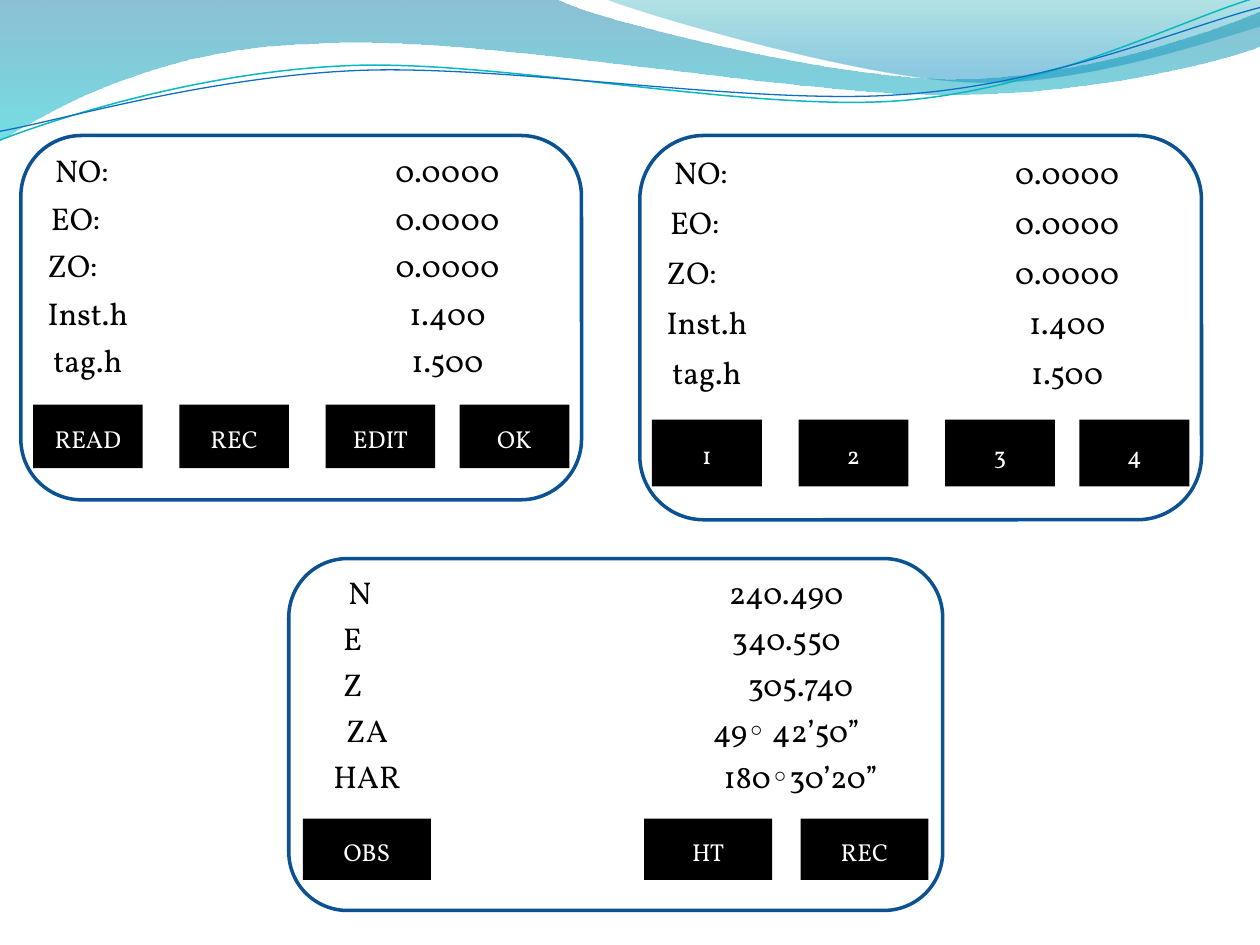
"""Build a slide of three surveying-instrument screens under a wave banner."""
import math
from dataclasses import dataclass

import pptx
import pptx.dml.color
import pptx.enum.shapes
import pptx.enum.text
import pptx.oxml
import pptx.oxml.ns
import pptx.util

Pt = pptx.util.Pt
qn = pptx.oxml.ns.qn
MSO_SHAPE = pptx.enum.shapes.MSO_SHAPE

FONT = "Vollkorn"
COLORS = {
    "text": "000000", "key": "000000", "key_text": "FFFFFF", "frame": "0B5292",
    "teal_line": "0AB8BF", "blue_line": "0F6FC6",
    "deep_blue": "0074A1", "cyan": "00C6CF", "teal": "00A1A9", "sky": "008BBF",
}
GRID_COLUMNS, GRID_ROWS = 46, 23
ROW_STEP, ROW_HEIGHT, KEY_ROW, KEY_SPAN = 3, 4, 17, 9
LABEL_CELLS = [(1, 8), (1, 7), (0, 9), (0, 11), (0, 11)]
LINE_TILT, LINE_CENTER = -2.7, (359.3, 41.4)


@dataclass
class Stop:
    color: str
    position: float
    opacity: int


@dataclass
class Wave:
    start: tuple[float, float]
    segments: list[tuple[float, ...]]
    stops: tuple[Stop, ...] = ()
    line: str = ""
    line_width: float = 0


@dataclass
class Screen:
    left: float
    top: float
    width: float
    height: float
    labels: list[str]
    values: list[str]
    value_cells: list[tuple[int, int]]
    keys: dict[int, str]


COORDINATE_LABELS = ["NO:", "EO:", "ZO: ", "Inst.h", "tag.h"]
COORDINATE_VALUES = ["0.0000", "0.0000", "0.0000", "1.400", "1.500"]
COORDINATE_CELLS = [(25, 20), (25, 20), (29, 12), (29, 12), (29, 12)]

WAVES = [
    Wave((0, 0), [
        (317, -1), (343, 12, 478, 45, 546, 45), (614, 45, 690, 19, 720, 6.5),
        (721, 26), (708, 32, 626, 55, 537, 54), (448, 54, 275, 20, 185, 24.5),
        (93, 26, 33, 60, -1, 81),
    ], (Stop("deep_blue", 0, 45), Stop("cyan", 1, 55))),
    Wave((345, -1), [
        (367, 8, 491, 44.6, 554, 47), (616, 49.7, 692, 23, 720, 15), (720, 0),
    ], (Stop("teal", 0, 30), Stop("sky", 0.8, 45))),
    Wave((0, 80), [
        (34.5, 67, 114, 41, 199.5, 37.5), (284.5, 34, 427, 64, 513.5, 57.6),
        (600, 51, 675, 11, 718.5, -1.5),
    ], line="teal_line", line_width=0.85),
    Wave((0, 75), [
        (34, 69, 118, 44, 204, 40.3), (290, 36.7, 430, 60.5, 516, 54),
        (602, 48, 678, 15, 720, 4.3),
    ], line="blue_line", line_width=0.75),
]

SCREENS = [
    Screen(11.9, 77.4, 320.4, 208.2, COORDINATE_LABELS, COORDINATE_VALUES,
           COORDINATE_CELLS, {1: "READ", 13: "REC", 25: "EDIT", 36: "OK"}),
    Screen(365.6, 77.4, 321, 219.6, COORDINATE_LABELS, COORDINATE_VALUES,
           COORDINATE_CELLS, {1: "1", 13: "2", 25: "3", 36: "4"}),
    Screen(165, 319.2, 373.7, 201.1, ["N", "E", "Z", "ZA", "HAR"],
           ["240.490", "340.550", "305.740", "49◦ 42’50”", "180◦30’20”"],
           [(25, 20), (25, 20), (29, 14), (26, 18), (27, 18)],
           {1: "OBS", 25: "HT", 36: "REC"}),
]


def rgb(name: str) -> pptx.dml.color.RGBColor:
    """Return the palette colour with this name."""
    return pptx.dml.color.RGBColor.from_string(COLORS[name])


def level(point: tuple[float, float]) -> tuple[float, float]:
    """Return a point of a tilted line with the tilt taken out."""
    angle = math.radians(-LINE_TILT)
    dx, dy = point[0] - LINE_CENTER[0], point[1] - LINE_CENTER[1]
    return (LINE_CENTER[0] + dx * math.cos(angle) - dy * math.sin(angle),
            LINE_CENTER[1] + dx * math.sin(angle) + dy * math.cos(angle))


def bend(ribbon, segments: list[tuple[float, ...]]) -> None:
    """Turn each run of three control points into a cubic Bezier curve."""
    vertices = iter(list(ribbon.element.spPr.iter(qn("a:lnTo"))))
    for segment in segments:
        first, *others = [next(vertices) for _ in range(len(segment) // 2)]
        if others:
            curve = pptx.oxml.parse_xml(
                f'<a:cubicBezTo {pptx.oxml.ns.nsdecls("a")}/>')
            first.addprevious(curve)
            for vertex in (first, *others):
                curve.append(vertex[0])
                vertex.getparent().remove(vertex)


def fill_gradient(shape, stops: tuple[Stop, ...]) -> None:
    """Fill a shape with a translucent gradient from top to bottom."""
    shape.fill.gradient()
    shape.fill.gradient_angle = 270
    for gradient_stop, stop in zip(shape.fill.gradient_stops, stops):
        gradient_stop.color.rgb = rgb(stop.color)
        gradient_stop.position = stop.position
    for color, stop in zip(shape.element.spPr.iter(qn("a:srgbClr")), stops):
        color.append(pptx.oxml.parse_xml(
            f'<a:alpha {pptx.oxml.ns.nsdecls("a")} val="{stop.opacity * 1000}"/>'))


def draw_wave(shapes, wave: Wave) -> None:
    """Draw one filled or outlined wave."""
    points = [wave.start]
    for segment in wave.segments:
        points += zip(segment[::2], segment[1::2])
    if wave.line:
        points = [level(point) for point in points]
    (first_x, first_y), *rest = [(Pt(x), Pt(y)) for x, y in points]
    builder = shapes.build_freeform(first_x, first_y)
    builder.add_line_segments(rest, close=bool(wave.stops))
    ribbon = builder.convert_to_shape()
    bend(ribbon, wave.segments)
    ribbon.shadow.inherit = False
    if wave.stops:
        fill_gradient(ribbon, wave.stops)
        ribbon.line.fill.background()
    else:
        ribbon.rotation = LINE_TILT
        ribbon.fill.background()
        ribbon.line.color.rgb = rgb(wave.line)
        ribbon.line.width = Pt(wave.line_width)


def write(shape, text: str, size: float, color: str) -> None:
    """Put one centred line of text in a shape."""
    frame = shape.text_frame
    frame.word_wrap = True
    frame.vertical_anchor = pptx.enum.text.MSO_ANCHOR.MIDDLE
    frame.text = text
    paragraph = frame.paragraphs[0]
    paragraph.alignment = pptx.enum.text.PP_ALIGN.CENTER
    paragraph.line_spacing = 1.15
    paragraph.space_after = Pt(10)
    font = paragraph.runs[0].font
    font.name = FONT
    font.size = Pt(size)
    font.color.rgb = rgb(color)


def cell_box(screen: Screen, column: int, row: int, span: int) -> list[int]:
    """Return left, top, width and height of a span of grid cells."""
    unit_x, unit_y = screen.width / GRID_COLUMNS, screen.height / GRID_ROWS
    return [Pt(screen.left + column * unit_x), Pt(screen.top + row * unit_y),
            Pt(span * unit_x), Pt(ROW_HEIGHT * unit_y)]


def draw_screen(slide_shapes, screen: Screen) -> None:
    """Draw an instrument screen with its readings and keys."""
    shapes = slide_shapes.add_group_shape().shapes
    frame = shapes.add_shape(MSO_SHAPE.ROUNDED_RECTANGLE, Pt(screen.left),
                             Pt(screen.top), Pt(screen.width), Pt(screen.height))
    frame.shadow.inherit = False
    frame.fill.background()
    frame.line.color.rgb = rgb("frame")
    frame.line.width = Pt(2)
    for texts, cells in ((screen.labels, LABEL_CELLS),
                         (screen.values, screen.value_cells)):
        for index, (text, (column, span)) in enumerate(zip(texts, cells)):
            reading = shapes.add_textbox(
                *cell_box(screen, column, index * ROW_STEP, span))
            write(reading, text, 18, "text")
    for column, text in screen.keys.items():
        key = shapes.add_shape(MSO_SHAPE.RECTANGLE,
                               *cell_box(screen, column, KEY_ROW, KEY_SPAN))
        key.shadow.inherit = False
        key.fill.solid()
        key.fill.fore_color.rgb = rgb("key")
        key.line.fill.background()
        write(key, text, 14, "key_text")


deck = pptx.Presentation()
deck.slide_width, deck.slide_height = Pt(720), Pt(540)
slide = deck.slides.add_slide(deck.slide_layouts[6])
for banner_wave in WAVES:
    draw_wave(slide.shapes, banner_wave)
for instrument_screen in SCREENS:
    draw_screen(slide.shapes, instrument_screen)
deck.save("out.pptx")
